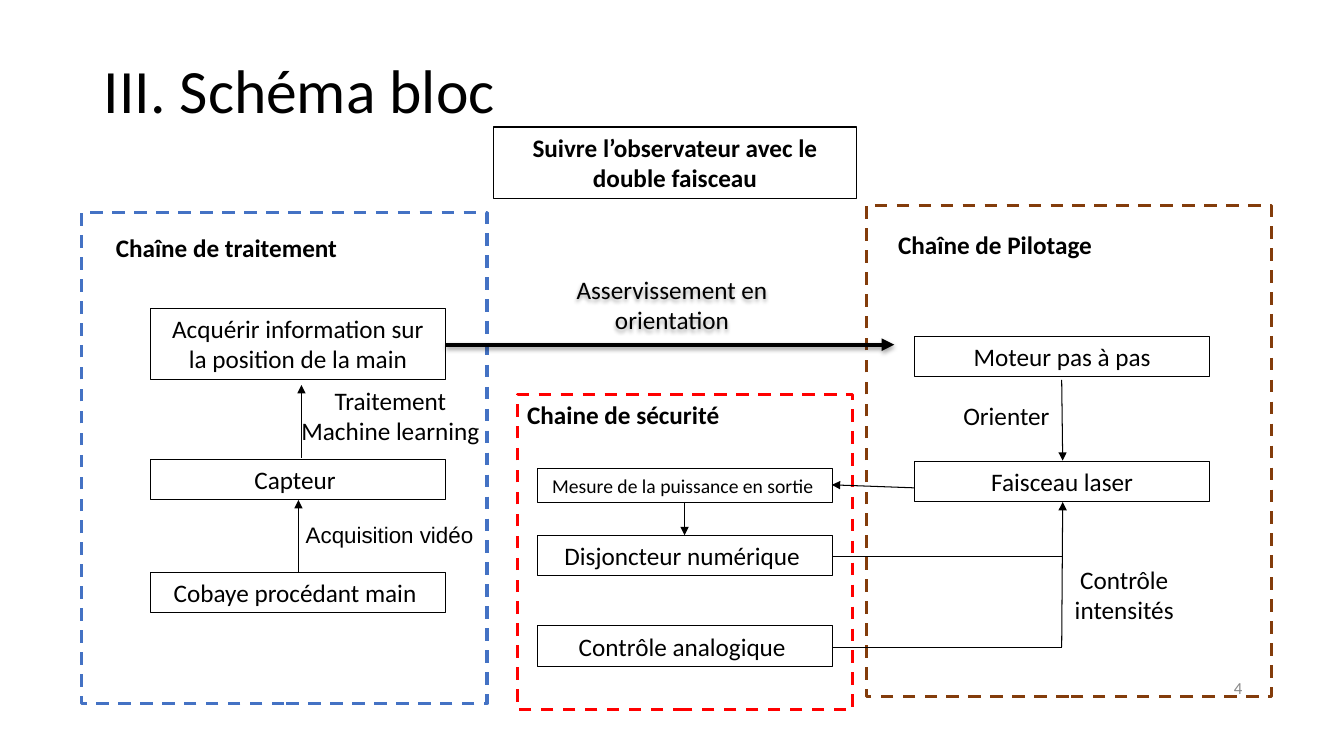
from lxml import etree
from pptx import Presentation
from pptx.dml.color import RGBColor
from pptx.enum.dml import MSO_LINE
from pptx.enum.shapes import MSO_CONNECTOR, MSO_SHAPE
from pptx.enum.text import MSO_ANCHOR, MSO_AUTO_SIZE, PP_ALIGN
from pptx.oxml.ns import qn
from pptx.util import Inches, Pt

RECTANGLE = MSO_SHAPE.RECTANGLE
STRAIGHT = MSO_CONNECTOR.STRAIGHT
DASH = MSO_LINE.DASH
LEFT, CENTER, RIGHT = PP_ALIGN.LEFT, PP_ALIGN.CENTER, PP_ALIGN.RIGHT
TOP, MIDDLE = MSO_ANCHOR.TOP, MSO_ANCHOR.MIDDLE
NO_AUTOFIT = MSO_AUTO_SIZE.NONE

COLORS = {
    "ink": "000000",
    "processing": "4472C4",
    "steering": "833C0B",
    "safety": "FF0000",
    "number": "888888",
}
BLOCK_WIDTH = 2.93
ONE_LINE, TWO_LINES = 0.4, 0.71


def color(name):
    return RGBColor.from_string(COLORS[name])


def write(shape, text, size=18, font="Calibri", ink="ink", bold=False,
          align=CENTER, anchor=TOP, spacing=None, margin=0.1):
    frame = shape.text_frame
    frame.word_wrap = True
    frame.auto_size = NO_AUTOFIT
    frame.vertical_anchor = anchor
    frame.margin_left = frame.margin_right = Inches(margin)
    frame.text = text
    for paragraph in frame.paragraphs:
        paragraph.alignment = align
        paragraph.line_spacing = spacing
        paragraph.font.size = Pt(size)
        paragraph.font.name = font
        paragraph.font.bold = bold
        paragraph.font.color.rgb = color(ink)


def add_rectangle(slide, x, y, width, height, outline="ink", weight=0.75):
    rectangle = slide.shapes.add_shape(
        RECTANGLE, Inches(x), Inches(y), Inches(width), Inches(height))
    rectangle.shadow.inherit = False
    rectangle.fill.background()
    rectangle.line.color.rgb = color(outline)
    rectangle.line.width = Pt(weight)
    return rectangle


def add_zone(slide, x, y, width, height, outline):
    """Add the dashed frame around one chain of the diagram."""
    zone = add_rectangle(slide, x, y, width, height, outline, 2.25)
    zone.line.dash_style = DASH
    return zone


def add_block(slide, text, x, y, width=BLOCK_WIDTH, height=ONE_LINE, **style):
    write(add_rectangle(slide, x, y, width, height), text, **style)


def add_label(slide, text, x, y, width, height=ONE_LINE, **style):
    label = slide.shapes.add_textbox(
        Inches(x), Inches(y), Inches(width), Inches(height))
    write(label, text, **style)
    return label


def add_link(slide, start, end, weight=0.75, arrow=True):
    link = slide.shapes.add_connector(
        STRAIGHT, *(Inches(length) for length in (*start, *end)))
    link.line.color.rgb = color("ink")
    link.line.width = Pt(weight)
    if arrow:
        etree.SubElement(link.line._get_or_add_ln(), qn("a:tailEnd"), type="triangle")
    etree.SubElement(link._element.spPr, qn("a:effectLst"))
    return link


def cast_shadow(shape):
    """Give the shape a soft shadow straight below it."""
    properties = shape._element.spPr
    effects = properties.find(qn("a:effectLst"))
    if effects is None:
        effects = etree.SubElement(properties, qn("a:effectLst"))
    shadow = etree.SubElement(
        effects, qn("a:outerShdw"), blurRad=str(Pt(3.1)), dist=str(Pt(1.8)),
        dir="5400000", rotWithShape="0")
    shade = etree.SubElement(shadow, qn("a:srgbClr"), val=COLORS["ink"])
    etree.SubElement(shade, qn("a:alpha"), val="35000")


def add_title(slide, text):
    title = slide.shapes.title
    title.left, title.top = Inches(0.93), Inches(0.2)
    title.width, title.height = Inches(11.5), Inches(1.45)
    write(title, text, size=44, align=LEFT, anchor=MIDDLE, spacing=0.9)


def add_processing_chain(slide):
    add_zone(slide, 0.81, 2.11, 4.02, 4.87, "processing")
    add_label(slide, "Chaîne de traitement", 1.05, 2.26, 2.41, bold=True, align=LEFT)
    add_block(slide, "Acquérir information sur la position de la main",
              1.49, 3.06, height=TWO_LINES, margin=0.15)
    add_block(slide, "Capteur ", 1.49, 4.56)
    add_block(slide, "Cobaye procédant main ", 1.49, 5.68)
    add_link(slide, (2.96, 5.68), (2.96, 4.96))
    add_link(slide, (2.99, 4.54), (2.99, 3.82))
    add_label(slide, "Acquisition vidéo ", 2.43, 5.12, BLOCK_WIDTH, size=16, font="Arial")
    add_label(slide, "Traitement \nMachine learning ", 2.14, 3.77, 3.52, TWO_LINES)


def add_steering_chain(slide):
    add_zone(slide, 8.59, 2.04, 4.02, 4.87, "steering")
    add_label(slide, "Chaîne de Pilotage", 8.81, 2.23, 2.14, bold=True, align=LEFT)
    add_block(slide, "Moteur pas à pas", 9.07, 3.34)
    add_block(slide, "Faisceau laser", 9.07, 4.58)
    add_link(slide, (10.53, 3.77), (10.54, 4.57))
    add_label(slide, "Orienter ", 8.25, 3.92, 3.52)
    add_label(slide, "Contrôle\n intensités ", 9.39, 5.55, 3.52, TWO_LINES)


def add_safety_chain(slide):
    zone = add_zone(slide, 5.13, 3.91, 3.33, 3.13, "safety")
    write(zone, "Chaine de sécurité", bold=True, align=LEFT)
    add_block(slide, "Mesure de la puissance en sortie ", 5.33, 4.65, height=0.34, size=14)
    add_block(slide, "Disjoncteur numérique ", 5.33, 5.31)
    add_block(slide, "Contrôle analogique ", 5.33, 6.21)
    add_link(slide, (6.79, 4.98), (6.79, 5.31))


def add_links_between_chains(slide):
    cast_shadow(add_label(slide, "Asservissement en orientation",
                          5.2, 2.67, BLOCK_WIDTH, TWO_LINES))
    cast_shadow(add_link(slide, (4.42, 3.42), (8.87, 3.42), weight=3))
    add_link(slide, (9.07, 4.84), (8.25, 4.81))
    add_link(slide, (10.53, 6.42), (10.54, 4.98))
    for control_y in (5.52, 6.42):
        add_link(slide, (8.26, control_y), (10.53, control_y), arrow=False)


def main():
    deck = Presentation()
    deck.slide_width, deck.slide_height = Inches(13.33), Inches(7.5)
    slide = deck.slides.add_slide(deck.slide_layouts[5])
    add_title(slide, "III. Schéma bloc")
    add_block(slide, "Suivre l’observateur avec le double faisceau",
              4.89, 1.26, 3.61, TWO_LINES, bold=True)
    add_processing_chain(slide)
    add_steering_chain(slide)
    add_safety_chain(slide)
    add_links_between_chains(slide)
    add_label(slide, "4", 9.42, 6.62, 3, size=12, ink="number", align=RIGHT, anchor=MIDDLE)
    deck.save("out.pptx")


if __name__ == "__main__":
    main()
